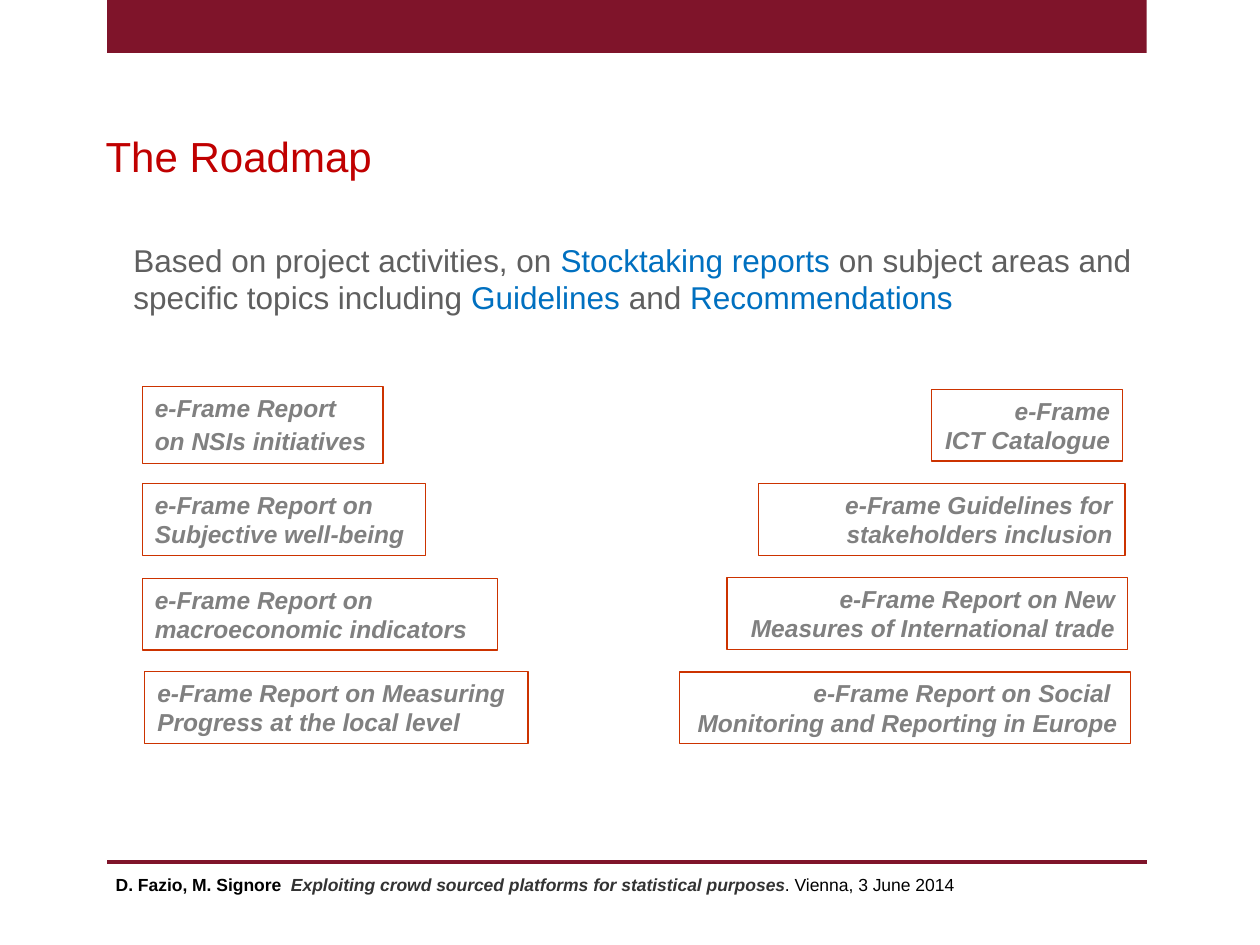
import pptx
import pptx.dml.color
import pptx.enum.shapes
import pptx.enum.text
import pptx.oxml.ns
import pptx.util
from lxml import etree

RGBColor = pptx.dml.color.RGBColor
ALIGN = pptx.enum.text.PP_ALIGN
MAROON = RGBColor(0x7F, 0x14, 0x2A)
RED = RGBColor(0xC0, 0x00, 0x00)
ORANGE = RGBColor(0xCC, 0x33, 0x00)
BLUE = RGBColor(0x00, 0x70, 0xC0)
SLATE = RGBColor(0x5F, 0x5F, 0x5F)
GRAY = RGBColor(0x80, 0x80, 0x80)
CHARCOAL = RGBColor(0x33, 0x33, 0x33)
BLACK = RGBColor(0x00, 0x00, 0x00)
COLUMNS, ROWS = 100, 75


def add_run(paragraph, text, size, color, bold=False, italic=False, face="Arial"):
    run = paragraph.add_run()
    run.text = text
    run.font.name = face
    run.font.size = pptx.util.Pt(size)
    run.font.color.rgb = color
    run.font.bold = bold
    run.font.italic = italic


class RoadmapSlide:
    def __init__(self, deck):
        self.slide = deck.slides.add_slide(deck.slide_layouts[6])
        self.cell_width = deck.slide_width / COLUMNS
        self.cell_height = deck.slide_height / ROWS

    def place(self, col, row, cols, rows):
        return (round(col * self.cell_width), round(row * self.cell_height),
                round(cols * self.cell_width), round(rows * self.cell_height))

    def fill_frame(self, frame, paragraphs, align=ALIGN.LEFT, wrap=True):
        frame.word_wrap = wrap
        frame.auto_size = pptx.enum.text.MSO_AUTO_SIZE.SHAPE_TO_FIT_TEXT
        frame.vertical_anchor = pptx.enum.text.MSO_ANCHOR.TOP
        for index, runs in enumerate(paragraphs):
            paragraph = frame.add_paragraph() if index else frame.paragraphs[0]
            paragraph.alignment = align
            for text, style in runs:
                add_run(paragraph, text, **style)

    def rectangle(self, area):
        shape = self.slide.shapes.add_shape(
            pptx.enum.shapes.MSO_SHAPE.RECTANGLE, *self.place(*area))
        shape.shadow.inherit = False
        return shape

    def band(self, area):
        band = self.rectangle(area)
        band.fill.solid()
        band.fill.fore_color.rgb = MAROON
        band.line.fill.background()

    def rule(self, col, row, cols):
        left, top, width, _ = self.place(col, row, cols, 0)
        rule = self.slide.shapes.add_connector(
            pptx.enum.shapes.MSO_CONNECTOR.STRAIGHT, left, top, left + width, top)
        rule.line.color.rgb = MAROON
        rule.line.width = pptx.util.Pt(2)
        etree.SubElement(rule._element.spPr, pptx.oxml.ns.qn("a:effectLst"))

    def text(self, area, runs, wrap=True):
        frame = self.slide.shapes.add_textbox(*self.place(*area)).text_frame
        self.fill_frame(frame, [runs], wrap=wrap)
        return frame

    def report(self, area, paragraphs, align, wrap=True):
        box = self.rectangle(area)
        box.fill.background()
        box.line.color.rgb = ORANGE
        box.line.width = pptx.util.Pt(0.75)
        self.fill_frame(box.text_frame, paragraphs, align, wrap)


def main():
    deck = pptx.Presentation()
    deck.slide_width = pptx.util.Inches(10)
    deck.slide_height = pptx.util.Inches(7.5)
    roadmap = RoadmapSlide(deck)

    roadmap.band((8.5, 0, 82.5, 4.2))
    roadmap.rule(8.5, 68.4, 82.5)
    roadmap.text((7.4, 9.9, 89.3, 5), [("The Roadmap", dict(size=24, color=RED))])

    plain = dict(size=18, color=SLATE)
    accent = dict(size=18, color=BLUE)
    basis = roadmap.text((4.6, 18.6, 86.6, 7.1), [
        ("Based on project activities, on ", plain),
        ("Stocktaking reports ", accent),
        ("on subject areas and specific topics including ", plain),
        ("Guidelines", accent),
        (" and ", plain),
        ("Recommendations", accent),
    ])
    basis_properties = basis.paragraphs[0]._p.get_or_add_pPr()
    basis_properties.set("marL", str(pptx.util.Inches(0.5)))
    basis_properties.set("indent", "0")
    basis.paragraphs[0].space_after = pptx.util.Pt(12)

    label = dict(size=14, color=GRAY, bold=True, italic=True)
    left_reports = [
        (11.3, 30.7, 19.1, 6.1, [("e-Frame Report on NSIs initiatives", label),
                                 (" ", {**label, "size": 16})]),
        (11.3, 38.4, 22.5, 5.7, [("e-Frame Report on Subjective well-being", label)]),
        (11.3, 45.9, 28.2, 5.7, [("e-Frame Report on macroeconomic indicators", label)]),
        (11.5, 53.3, 30.4, 5.7,
         [("e-Frame Report on Measuring Progress at the local level", label)]),
    ]
    for *area, runs in left_reports:
        roadmap.report(area, [runs], ALIGN.LEFT)

    right_reports = [
        (15.2, ["e-Frame", "ICT Catalogue"]),
        (29.1, ["e-Frame Guidelines for stakeholders inclusion"]),
        (31.8, ["e-Frame Report on New Measures of International trade"]),
        (35.8, ["e-Frame Report on Social  Monitoring and Reporting in Europe"]),
    ]
    for index, (cols, lines) in enumerate(right_reports):
        right_edge = 89.1 + 0.2 * index
        roadmap.report((right_edge - cols, 30.9 + 7.48 * index, cols, 5.7),
                       [[(line, label)] for line in lines],
                       ALIGN.RIGHT, wrap=len(lines) == 1)

    credit = roadmap.text((8.2, 69, 70.5, 2.6), [
        ("D. Fazio, M. Signore  ", dict(size=10, color=BLACK, bold=True)),
        ("Exploiting crowd sourced platforms for statistical purposes",
         dict(size=10, color=CHARCOAL, bold=True, italic=True)),
        (". Vienna, 3 June 2014", dict(size=10, color=BLACK)),
    ], wrap=False)
    credit.paragraphs[0].line_spacing = 0.93

    deck.save("out.pptx")


if __name__ == "__main__":
    main()
